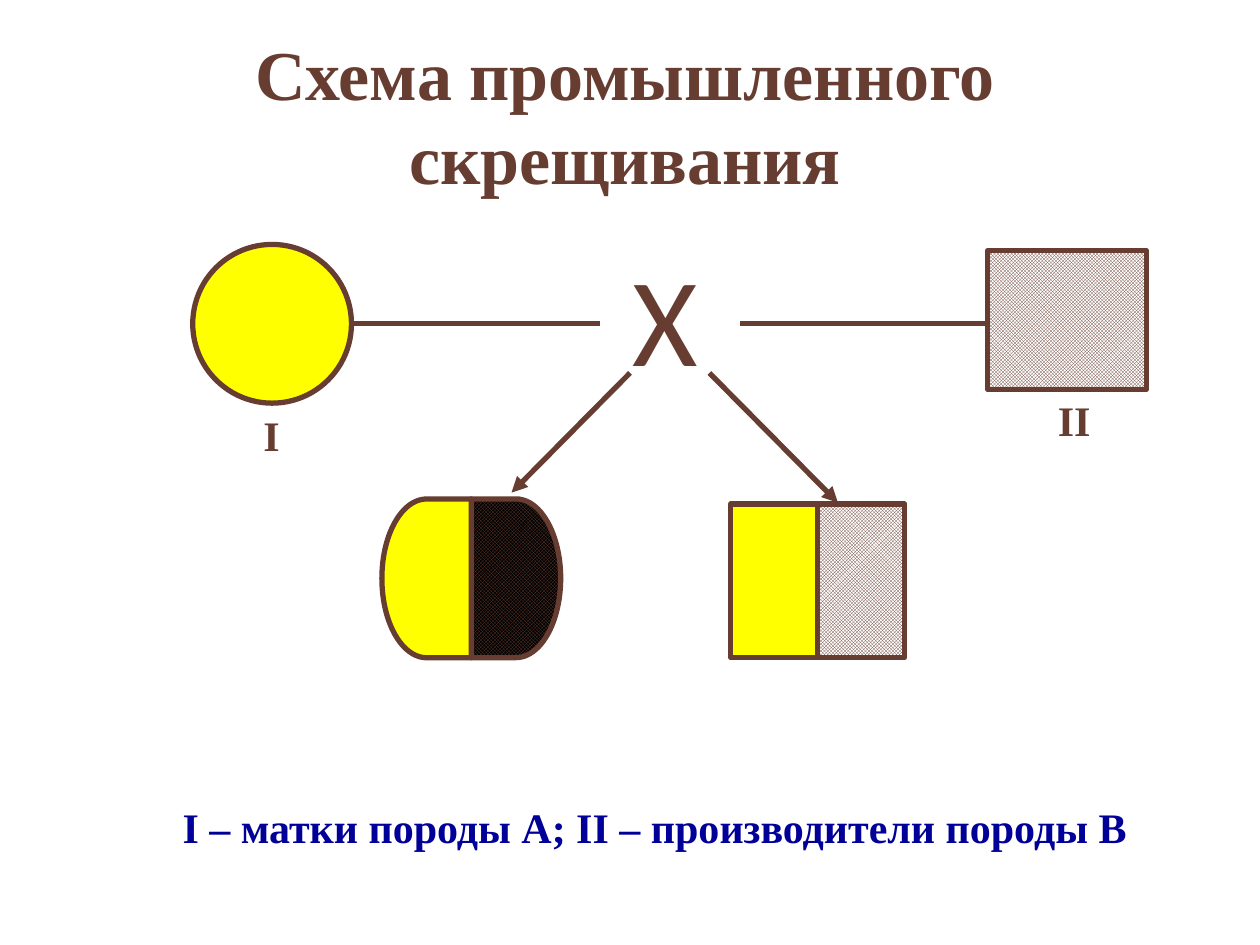
from dataclasses import dataclass

from lxml.etree import SubElement
from pptx import Presentation
from pptx.dml.color import RGBColor
from pptx.enum.dml import MSO_PATTERN
from pptx.enum.shapes import MSO_CONNECTOR, MSO_SHAPE
from pptx.enum.text import MSO_ANCHOR, MSO_AUTO_SIZE, PP_ALIGN
from pptx.oxml.ns import qn
from pptx.util import Inches, Pt


@dataclass(frozen=True)
class Theme:
    brown: RGBColor = RGBColor(0x67, 0x3D, 0x31)
    yellow: RGBColor = RGBColor(0xFF, 0xFF, 0x00)
    white: RGBColor = RGBColor(0xFF, 0xFF, 0xFF)
    black: RGBColor = RGBColor(0x00, 0x00, 0x00)
    blue: RGBColor = RGBColor(0x00, 0x00, 0x99)
    serif: str = "Times New Roman"
    sans: str = "Calibri"
    title_size: Pt = Pt(40)
    cross_size: Pt = Pt(72)
    label_size: Pt = Pt(24)
    line_width: Pt = Pt(3)


THEME = Theme()


def add_text(slide, box, text, size, color=THEME.brown, font_name=THEME.serif,
             bold=True, align=PP_ALIGN.CENTER, anchor=MSO_ANCHOR.TOP):
    frame = slide.shapes.add_textbox(*map(Inches, box)).text_frame
    frame.word_wrap = True
    frame.auto_size = MSO_AUTO_SIZE.SHAPE_TO_FIT_TEXT
    frame.vertical_anchor = anchor
    paragraph = frame.paragraphs[0]
    paragraph.text = text
    paragraph.alignment = align
    spacing = SubElement(paragraph._p.get_or_add_pPr(), qn("a:spcBef"))
    SubElement(spacing, qn("a:spcPct")).set("val", "50000")
    font = paragraph.font
    font.name, font.size, font.bold = font_name, size, bold
    font.color.rgb = color


def add_figure(slide, kind, box, color, checkered=False, rotation=0):
    """Add an outlined shape; a checkered one has brown checks on the color."""
    shape = slide.shapes.add_shape(kind, *map(Inches, box))
    shape.shadow.inherit = False
    shape.rotation = rotation
    if checkered:
        shape.fill.patterned()
        shape.fill.pattern = MSO_PATTERN.SMALL_CHECKER_BOARD
        shape.fill.fore_color.rgb = THEME.brown
        shape.fill.back_color.rgb = color
    else:
        shape.fill.solid()
        shape.fill.fore_color.rgb = color
    shape.line.color.rgb = THEME.brown
    shape.line.width = THEME.line_width


def add_line(slide, start, end, arrow=False):
    connector = slide.shapes.add_connector(
        MSO_CONNECTOR.STRAIGHT, *map(Inches, (*start, *end)))
    connector.line.color.rgb = THEME.brown
    connector.line.width = THEME.line_width
    if arrow:
        SubElement(connector.line._get_or_add_ln(), qn("a:tailEnd")).set("type", "triangle")
    SubElement(connector._element.spPr, qn("a:effectLst"))


def add_parents(slide, left, top, width, height):
    """Place the dam on the left, the sire on the right and the cross between."""
    diameter, sire_height, label_width = 1.26, 1.1, 0.47
    right = left + width
    middle = top + diameter / 2
    add_figure(slide, MSO_SHAPE.OVAL, (left, top, diameter, diameter), THEME.yellow)
    add_figure(slide, MSO_SHAPE.RECTANGLE,
               (right - diameter, top + 0.05, diameter, sire_height), THEME.white, checkered=True)
    add_text(slide, (left + 3.39, top - 0.08, 1.02, 1.3), "Х", THEME.cross_size,
             font_name=THEME.sans, bold=False, align=PP_ALIGN.LEFT)
    add_line(slide, (left + diameter, middle), (left + 3.23, middle))
    add_line(slide, (right - 3.23, middle), (right - diameter, middle))
    for text, label_left, label_top in (("I", 1.92, top + diameter),
                                        ("II", 8.29, top + 1.14)):
        add_text(slide, (label_left, label_top, label_width, height - diameter), text,
                 THEME.label_size, anchor=MSO_ANCHOR.MIDDLE)


def add_offspring(slide, kind, left, top, half_width, height, color, left_rotation=0):
    """Place two halves side by side: plain yellow and checkered."""
    add_figure(slide, kind, (left + half_width, top, half_width, height), color, checkered=True)
    add_figure(slide, kind, (left, top, half_width, height), THEME.yellow, rotation=left_rotation)


def build_slide(presentation):
    slide = presentation.slides.add_slide(presentation.slide_layouts[6])
    add_text(slide, (0.59, 0.19, 8.74, 1.43), "Схема промышленного скрещивания",
             THEME.title_size)
    add_parents(slide, 1.53, 1.94, 7.57, 1.76)
    add_line(slide, (5, 2.96), (4.06, 3.91), arrow=True)
    add_line(slide, (5.63, 2.96), (6.65, 3.99), arrow=True)
    add_offspring(slide, MSO_SHAPE.FLOWCHART_DELAY, 3.03, 3.96, 0.71, 1.26,
                  THEME.black, left_rotation=180)
    add_offspring(slide, MSO_SHAPE.RECTANGLE, 5.8, 4, 0.69, 1.22, THEME.white)
    add_text(slide, (1.22, 6.31, 7.95, 0.5),
             "I – матки породы А; II – производители породы В",
             THEME.label_size, color=THEME.blue)


def main():
    presentation = Presentation()
    presentation.slide_width = Inches(10)
    presentation.slide_height = Inches(7.5)
    build_slide(presentation)
    presentation.save("out.pptx")


if __name__ == "__main__":
    main()
